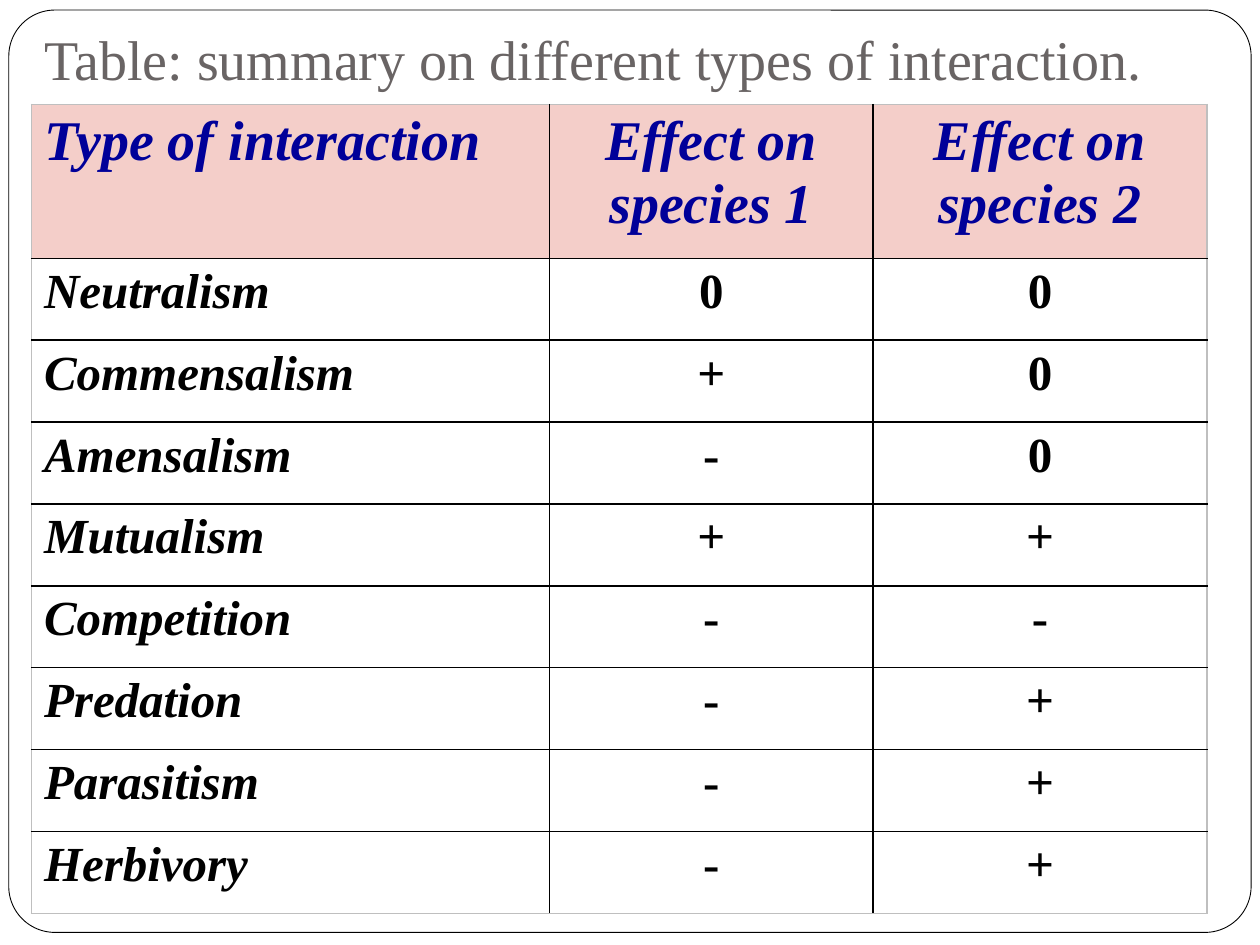
from pptx import Presentation
from pptx.dml.color import RGBColor as RGB
from pptx.enum.shapes import MSO_SHAPE as Shape
from pptx.enum.text import MSO_ANCHOR as Anchor, MSO_AUTO_SIZE as AutoSize, PP_ALIGN as Align
from pptx.oxml.ns import qn
from pptx.util import Inches, Pt
from lxml.etree import SubElement

COLORS = {"paper": "FFFFFF", "ink": "000000", "title": "696464",
          "heading": "000099", "header": "F4CEC9", "edge": "BFBFBF"}
HEADINGS = ["Type of interaction", "Effect on species 1", "Effect on species 2"]
INTERACTIONS = [
    ("Neutralism", "0", "0"),
    ("Commensalism", "+", "0"),
    ("Amensalism", "-", "0"),
    ("Mutualism", "+", "+"),
    ("Competition", "-", "-"),
    ("Predation", "-", "+"),
    ("Parasitism", "-", "+"),
    ("Herbivory", "-", "+"),
]


class SlideBuilder:
    """Holds the style and the current slide, and draws each kind of element."""

    font = "Times New Roman"

    def __init__(self, slide):
        self.slide = slide

    def color(self, name):
        return RGB.from_string(COLORS[name])

    def add_text(self, frame, text, size, color, align=Align.LEFT, bold=False, italic=False):
        paragraph = frame.paragraphs[0]
        paragraph.alignment = align
        run = paragraph.add_run()
        run.text = text
        run.font.name = self.font
        run.font.size = Pt(size)
        run.font.bold = bold
        run.font.italic = italic
        run.font.color.rgb = self.color(color)

    def frame(self, left, top, width, height):
        border = self.slide.shapes.add_shape(
            Shape.ROUNDED_RECTANGLE, Inches(left), Inches(top), Inches(width), Inches(height))
        border.adjustments[0] = 0.05
        border.shadow.inherit = False
        border.fill.solid()
        border.fill.fore_color.rgb = self.color("paper")
        border.line.color.rgb = self.color("ink")
        border.line.width = Pt(0.5)
        self.slide.shapes.element.insert(2, border.element)

    def title(self, text, left, top, width, height):
        title = self.slide.shapes.title
        title.left, title.top = Inches(left), Inches(top)
        title.width, title.height = Inches(width), Inches(height)
        body = title.text_frame
        body.auto_size = AutoSize.NONE
        body.word_wrap = True
        body.vertical_anchor = Anchor.BOTTOM
        body.margin_left = body.margin_right = body.margin_bottom = Inches(0.1)
        body.margin_top = Inches(0.05)
        self.add_text(body, text, 32, "title")

    def borders(self, cell, outer):
        properties = cell._tc.get_or_add_tcPr()
        for side, is_outer in outer.items():
            line = SubElement(properties, qn(f"a:{side}"), w=str(Pt(1)))
            fill = SubElement(line, qn("a:solidFill"))
            SubElement(fill, qn("a:srgbClr"), val=COLORS["edge" if is_outer else "ink"])

    def table(self, rows, left, top, widths, heights):
        table = self.slide.shapes.add_table(
            len(rows), len(widths), Inches(left), Inches(top),
            Inches(sum(widths)), Inches(sum(heights))).table
        for column, width in zip(table.columns, widths):
            column.width = Inches(width)
        for r, (row, values) in enumerate(zip(table.rows, rows)):
            row.height = Inches(heights[r])
            is_header = r == 0
            for c, (cell, value) in enumerate(zip(row.cells, values)):
                self.borders(cell, {"lnL": c == 0, "lnR": c == len(widths) - 1,
                                    "lnT": is_header, "lnB": r == len(rows) - 1})
                cell.fill.solid()
                cell.fill.fore_color.rgb = self.color("header" if is_header else "paper")
                self.add_text(cell.text_frame, value, 32 if is_header else 28,
                              "heading" if is_header else "ink",
                              Align.CENTER if c else Align.LEFT,
                              bold=True, italic=is_header or c == 0)


def main():
    deck = Presentation()
    deck.slide_width, deck.slide_height = Inches(10), Inches(7.5)
    builder = SlideBuilder(deck.slides.add_slide(deck.slide_layouts[5]))
    builder.frame(0.07, 0.08, 9.86, 7.32)
    builder.title("Table: summary on different types of interaction.", 0.25, 0, 9.25, 0.83)
    builder.table([HEADINGS, *INTERACTIONS], 0.25, 0.83, [4.11, 2.57, 2.65],
                  [1.22] + [0.65] * len(INTERACTIONS))
    deck.save("out.pptx")


if __name__ == "__main__":
    main()
